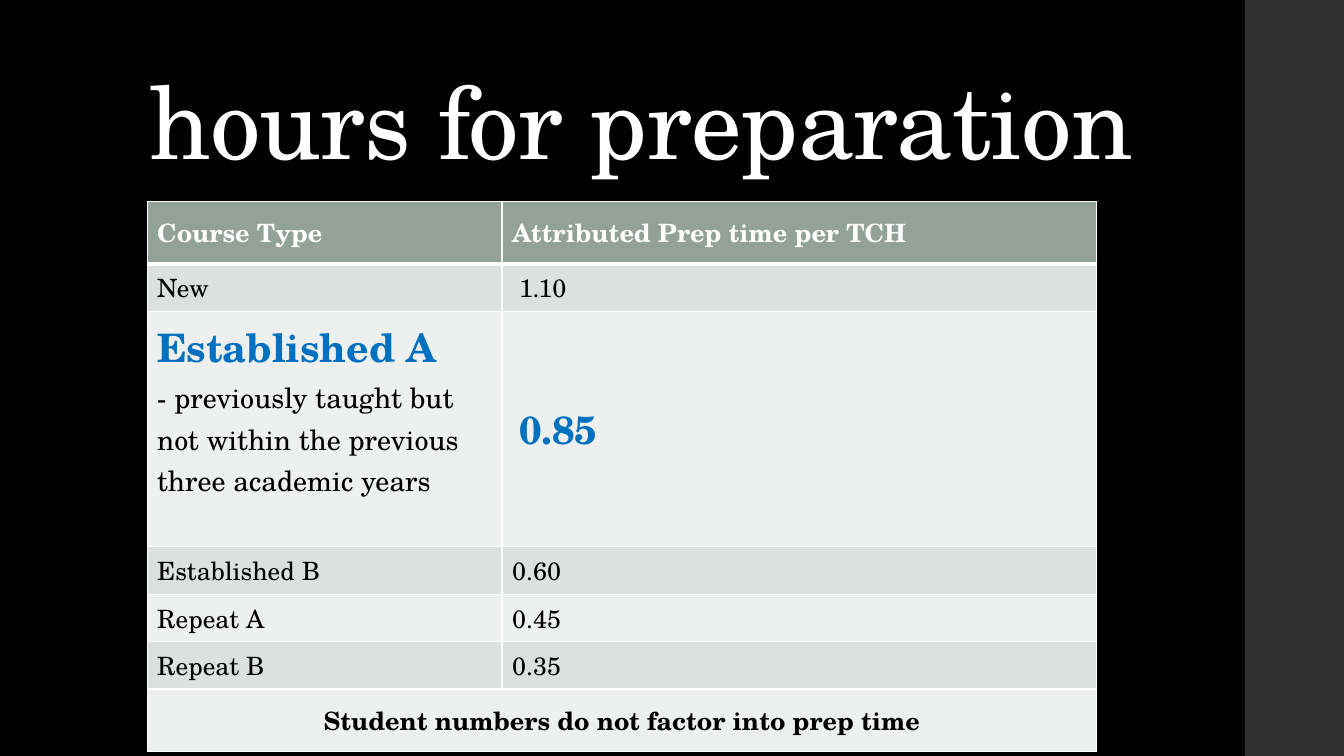
from dataclasses import dataclass

from lxml import etree
from pptx import Presentation
from pptx.dml.color import RGBColor
from pptx.enum.shapes import MSO_SHAPE
from pptx.enum.text import MSO_ANCHOR, MSO_AUTO_SIZE, PP_ALIGN
from pptx.oxml.ns import qn
from pptx.util import Inches, Pt

RECT = MSO_SHAPE.RECTANGLE
MIDDLE, BOTTOM = MSO_ANCHOR.MIDDLE, MSO_ANCHOR.BOTTOM
LEFT, CENTER = PP_ALIGN.LEFT, PP_ALIGN.CENTER
NO_FIT = MSO_AUTO_SIZE.NONE
WIDTH, HEIGHT = Inches(13.33), Inches(7.5)
TITLE_ONLY = 5


@dataclass(frozen=True)
class Theme:
    font: str = "TeX Gyre Schola"
    back: str = "000000"
    side: str = "303030"
    light: str = "FFFFFF"
    dark: str = "000000"
    accent: str = "0070C0"
    head: str = "93A299"
    bands: tuple = ("EEF0EF", "DCE0DE")
    title: int = 72
    large: int = 28
    note: int = 20
    body: int = 18


THEME = Theme()
COLS = (26.4, 44.25)
ROWS = (8.27, 6.27, 30.55, 6.27, 6.27, 6.27, 8.27)
COURSES = (
    ("Course Type", "Attributed Prep time per TCH"),
    ("New", "1.10"),
    ("Established A\n- previously taught but not within the previous "
     "three academic years", "0.85"),
    ("Established B", "0.60"),
    ("Repeat A", "0.45"),
    ("Repeat B", "0.35"),
    ("Student numbers do not factor into prep time", ""),
)
FEATURE = 2


def across(share):
    """Length of a percentage of the slide's width."""
    return int(WIDTH * share / 100)


def down(share):
    """Length of a percentage of the slide's height."""
    return int(HEIGHT * share / 100)


def place(x, y, w, h):
    return across(x), down(y), across(w), down(h)


def paint(fill, color):
    fill.solid()
    fill.fore_color.rgb = RGBColor.from_string(color)


def style(para, size, color, bold=False, align=LEFT):
    para.alignment = align
    for run in para.runs:
        font = run.font
        font.name, font.size, font.bold = THEME.font, Pt(size), bold
        font.color.rgb = RGBColor.from_string(color)


def add_side(slide):
    bar = slide.shapes.add_shape(RECT, *place(92.65, 0, 7.35, 100))
    bar.shadow.inherit = False
    paint(bar.fill, THEME.side)
    bar.line.fill.background()


def add_title(slide, text):
    title = slide.shapes.title
    title.left, title.top, title.width, title.height = place(
        10.35, 5.33, 79.52, 19.33)
    frame = title.text_frame
    frame.text = text
    frame.word_wrap = True
    frame.auto_size = NO_FIT
    frame.vertical_anchor = BOTTOM
    para = frame.paragraphs[0]
    para.line_spacing = 0.9
    style(para, THEME.title, THEME.light)
    para.runs[0].font._element.set("spc", "-50")


def add_edges(cell, top, base):
    """Draw the cell's four borders, top and base widths in points."""
    props = cell._tc.get_or_add_tcPr()
    for side, width in (("L", 1), ("R", 1), ("T", top), ("B", base)):
        line = etree.SubElement(props, qn(f"a:ln{side}"), w=str(Pt(width)))
        fill = etree.SubElement(line, qn("a:solidFill"))
        etree.SubElement(fill, qn("a:srgbClr"), val=THEME.light)


def fill_cell(cell, text, row, col):
    head, foot = row == 0, row == len(ROWS) - 1
    add_edges(cell, 3 if row == 1 else 1, 3 if head else 1)
    paint(cell.fill, THEME.head if head else THEME.bands[row % 2])
    cell.vertical_anchor = MIDDLE
    cell.text_frame.text = text
    paras = cell.text_frame.paragraphs
    if row == FEATURE:
        style(paras[0], THEME.large, THEME.accent, True)
        for para in paras[1:]:
            style(para, THEME.note, THEME.dark)
        if col == 0:
            cell.margin_bottom = Inches(0.46)
    else:
        style(paras[0], THEME.body, THEME.light if head else THEME.dark,
              head or foot, CENTER if foot else LEFT)
    if col == 1 and row in (1, FEATURE):
        cell.margin_left = Inches(0.17)


def add_hours(slide):
    box = place(10.95, 26.67, sum(COLS), sum(ROWS))
    table = slide.shapes.add_table(len(ROWS), len(COLS), *box).table
    for col, share in zip(table.columns, COLS):
        col.width = across(share)
    for row, share in zip(table.rows, ROWS):
        row.height = down(share)
    for row, texts in enumerate(COURSES):
        for col, text in enumerate(texts):
            fill_cell(table.cell(row, col), text, row, col)
    last = len(ROWS) - 1
    table.cell(last, 0).merge(table.cell(last, len(COLS) - 1))


def main():
    deck = Presentation()
    deck.slide_width, deck.slide_height = WIDTH, HEIGHT
    slide = deck.slides.add_slide(deck.slide_layouts[TITLE_ONLY])
    paint(slide.background.fill, THEME.back)
    add_side(slide)
    add_title(slide, "hours for preparation")
    add_hours(slide)
    deck.save("out.pptx")


if __name__ == "__main__":
    main()
